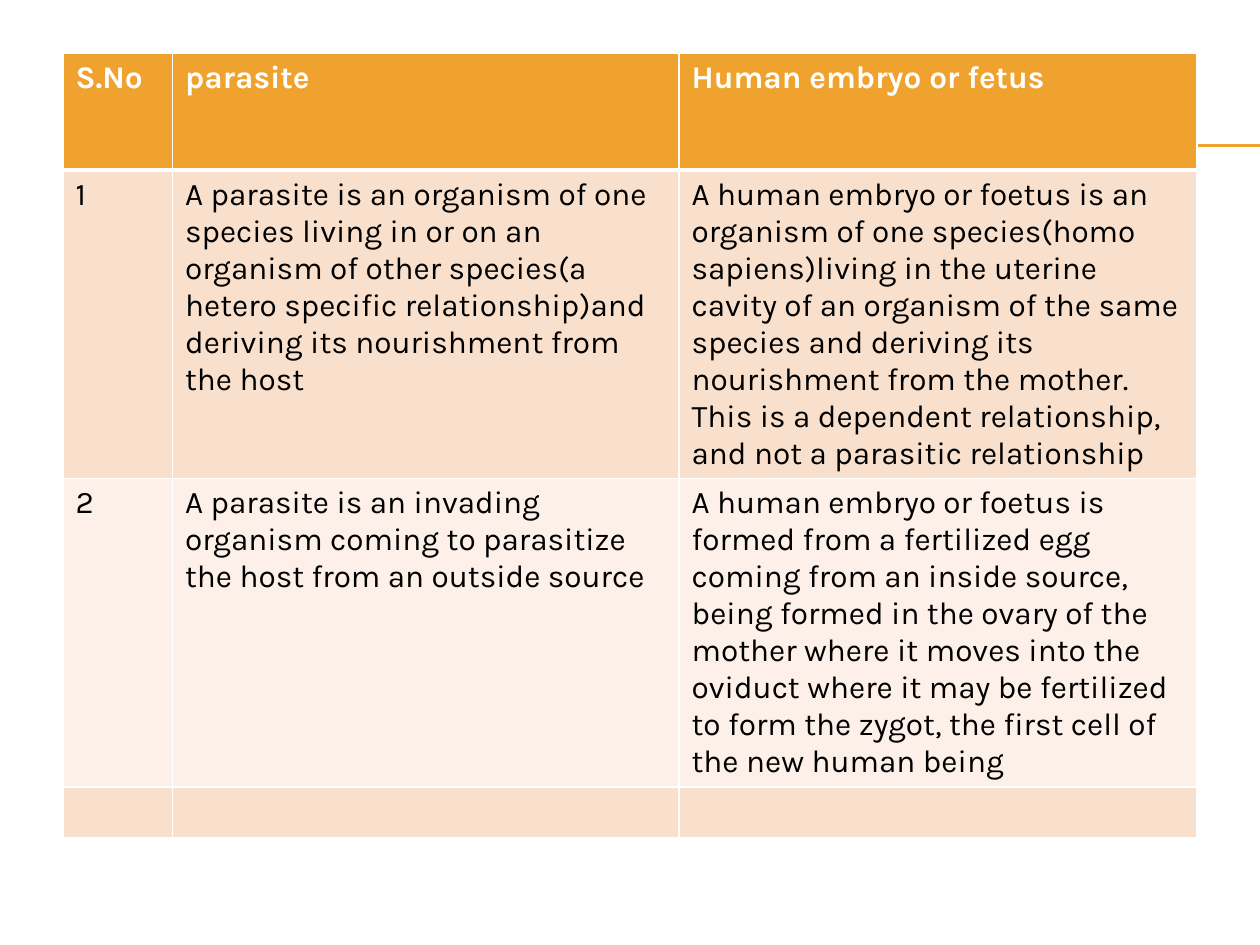
import pptx
import pptx.dml.color
import pptx.enum.shapes
import pptx.util
from lxml import etree
from pptx.oxml.ns import qn

Inches = pptx.util.Inches
Pt = pptx.util.Pt

ROWS = [
    ("S.No", "parasite", "Human embryo or fetus"),
    ("1",
     "A parasite is an organism of one species living in or on an organism of "
     "other species(a hetero specific relationship)and deriving its nourishment "
     "from the host",
     "A human embryo or foetus is an organism of one species(homo sapiens)living "
     "in the uterine cavity of an organism of the same species and deriving its "
     "nourishment from the mother. This is a dependent relationship, and not a "
     "parasitic relationship"),
    ("2",
     "A parasite is an invading organism coming to parasitize the host from an "
     "outside source",
     "A human embryo or foetus is formed from a fertilized egg coming from an "
     "inside source, being formed in the ovary of the mother where it moves into "
     "the oviduct where it may be fertilized to form the zygot, the first cell of "
     "the new human being"),
    ("", "", ""),
]
COLUMN_WIDTHS = [0.87, 4.02, 4.11]
ROW_HEIGHTS = [0.93, 2.44, 2.45, 0.4]
ROW_FILLS = ["F0A22E", "F9E0CD", "FCF0E8", "F9E0CD"]
RULE_HEIGHTS = [1.15, 1.16]


def color(value):
    return pptx.dml.color.RGBColor.from_string(value)


def add_border(cell, side, points):
    border = etree.SubElement(cell._tc.get_or_add_tcPr(), qn("a:ln" + side),
                              w=str(Pt(points)))
    fill = etree.SubElement(border, qn("a:solidFill"))
    etree.SubElement(fill, qn("a:srgbClr"), val="FFFFFF")


def add_rule(slide, y):
    rule = slide.shapes.add_connector(
        pptx.enum.shapes.MSO_CONNECTOR.STRAIGHT,
        Inches(0.56), Inches(y), Inches(10), Inches(y))
    rule.line.color.rgb = color("F0A22E")
    rule.line.width = Pt(0.75)
    etree.SubElement(rule._element.spPr, qn("a:effectLst"))


def format_cell(cell, row, text):
    header = row == 0
    for side in "LRTB":
        under_header = (side == "B" and header) or (side == "T" and row == 1)
        add_border(cell, side, 3 if under_header else 1)
    cell.fill.solid()
    cell.fill.fore_color.rgb = color(ROW_FILLS[row])
    cell.text = text
    font = cell.text_frame.paragraphs[0].font
    font.name = "Karla"
    font.size = Pt(18)
    font.bold = header
    font.color.rgb = color("FFFFFF" if header else "000000")


def main():
    deck = pptx.Presentation()
    deck.slide_width, deck.slide_height = Inches(10), Inches(7.5)
    slide = deck.slides.add_slide(deck.slide_layouts[6])
    for y in RULE_HEIGHTS:
        add_rule(slide, y)

    comparison = slide.shapes.add_table(
        len(ROWS), len(COLUMN_WIDTHS), Inches(0.5), Inches(0.42),
        Inches(sum(COLUMN_WIDTHS)), Inches(sum(ROW_HEIGHTS))).table
    for column, width in zip(comparison.columns, COLUMN_WIDTHS):
        column.width = Inches(width)
    for row, height in zip(comparison.rows, ROW_HEIGHTS):
        row.height = Inches(height)
    for row, texts in enumerate(ROWS):
        for column, text in enumerate(texts):
            format_cell(comparison.cell(row, column), row, text)

    deck.save("out.pptx")


if __name__ == "__main__":
    main()
